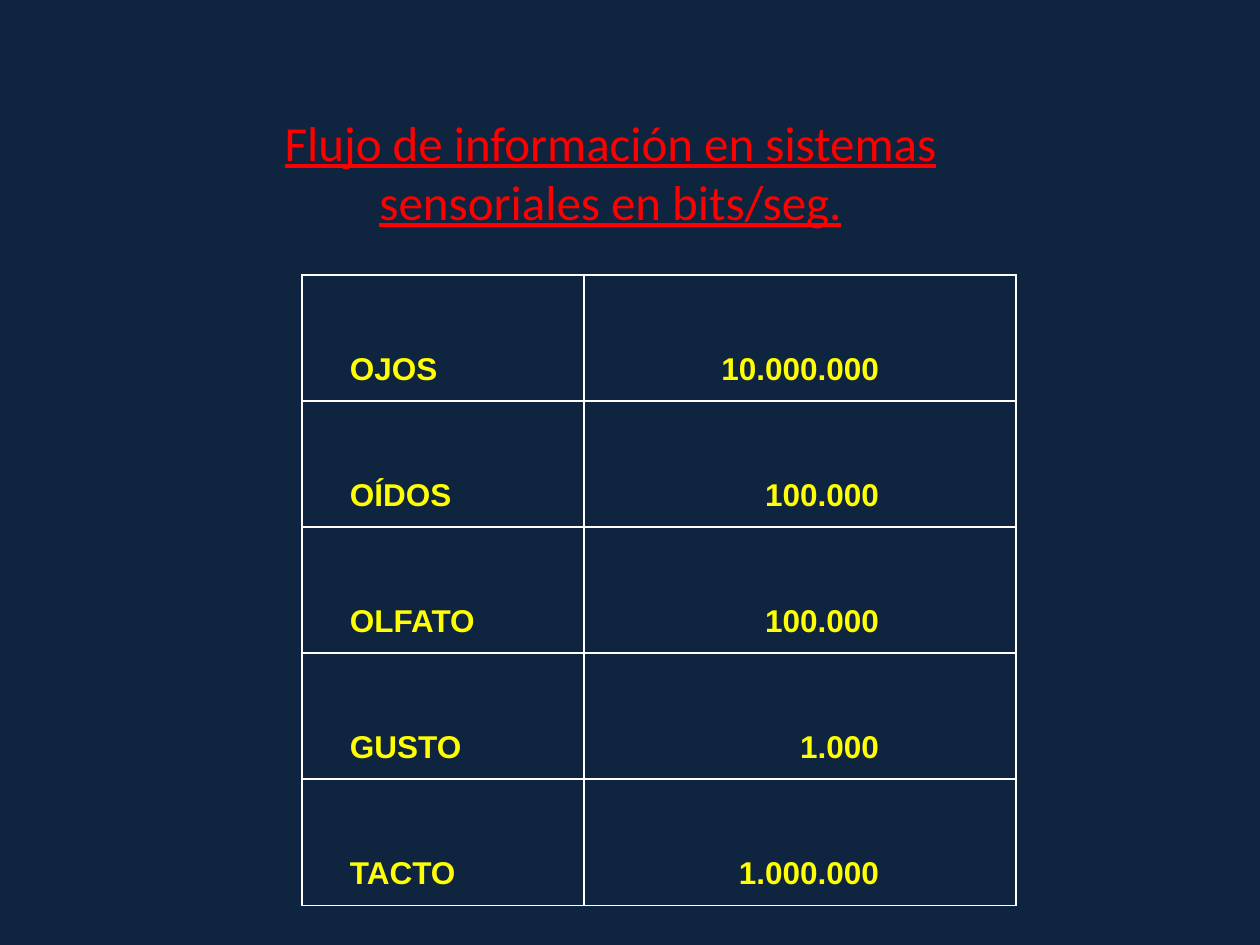
import pptx
import pptx.util
import pptx.dml.color
import pptx.enum.text

SCALE = 914400 // 126
COLORS = {"back": "0F243E", "title": "FF0000", "data": "FFFF00"}
FLOWS = [
    ("OJOS", "10.000.000"),
    ("OÍDOS", "100.000"),
    ("OLFATO", "100.000"),
    ("GUSTO", "1.000"),
    ("TACTO", "1.000.000"),
]
WIDTHS = [282, 432]
HEIGHTS = [120, 120, 118, 118, 97]
ALIGN = pptx.enum.text.PP_ALIGN


def px(n):
    return pptx.util.Emu(n * SCALE)


def color(name):
    return pptx.dml.color.RGBColor.from_string(COLORS[name])


class Deck:
    def __init__(self, slide):
        self.slide = slide
        fill = slide.background.fill
        fill.solid()
        fill.fore_color.rgb = color("back")

    def label(self, frame, text, align, face, size, tint):
        para = frame.paragraphs[0]
        para.alignment = align
        run = para.add_run()
        run.text = text
        font = run.font
        font.name = face
        font.size = pptx.util.Pt(size)
        font.color.rgb = color(tint)
        return para, font

    def title(self, text, left, top, width, height):
        box = self.slide.shapes.add_textbox(px(left), px(top), px(width), px(height))
        frame = box.text_frame
        frame.word_wrap = True
        para, font = self.label(frame, text, ALIGN.CENTER, "Calibri", 28, "title")
        font.underline = True

    def cell(self, cell, text, align):
        cell.fill.background()
        para, font = self.label(cell.text_frame, text, align, "Arial", 18, "data")
        para.line_spacing = 3.0
        para.space_before = pptx.util.Pt(5.4)
        font.bold = True

    def table(self, rows, left, top):
        frame = self.slide.shapes.add_table(
            len(rows), len(WIDTHS), px(left), px(top), px(sum(WIDTHS)), px(sum(HEIGHTS)))
        grid = frame.table
        grid.first_row = False
        grid.horz_banding = False
        for col, width in zip(grid.columns, WIDTHS):
            col.width = px(width)
        for row, height, (sense, flow) in zip(grid.rows, HEIGHTS, rows):
            row.height = px(height)
            name, rate = row.cells
            name.margin_left = px(48)
            rate.margin_right = px(137)
            self.cell(name, sense, ALIGN.LEFT)
            self.cell(rate, flow, ALIGN.RIGHT)


def main():
    prs = pptx.Presentation()
    prs.slide_width = px(1260)
    prs.slide_height = px(945)
    deck = Deck(prs.slides.add_slide(prs.slide_layouts[6]))
    deck.title("Flujo de información en sistemas sensoriales en bits/seg.", 174, 106, 873, 130)
    deck.table(FLOWS, 302, 275)
    prs.save("out.pptx")


if __name__ == "__main__":
    main()
